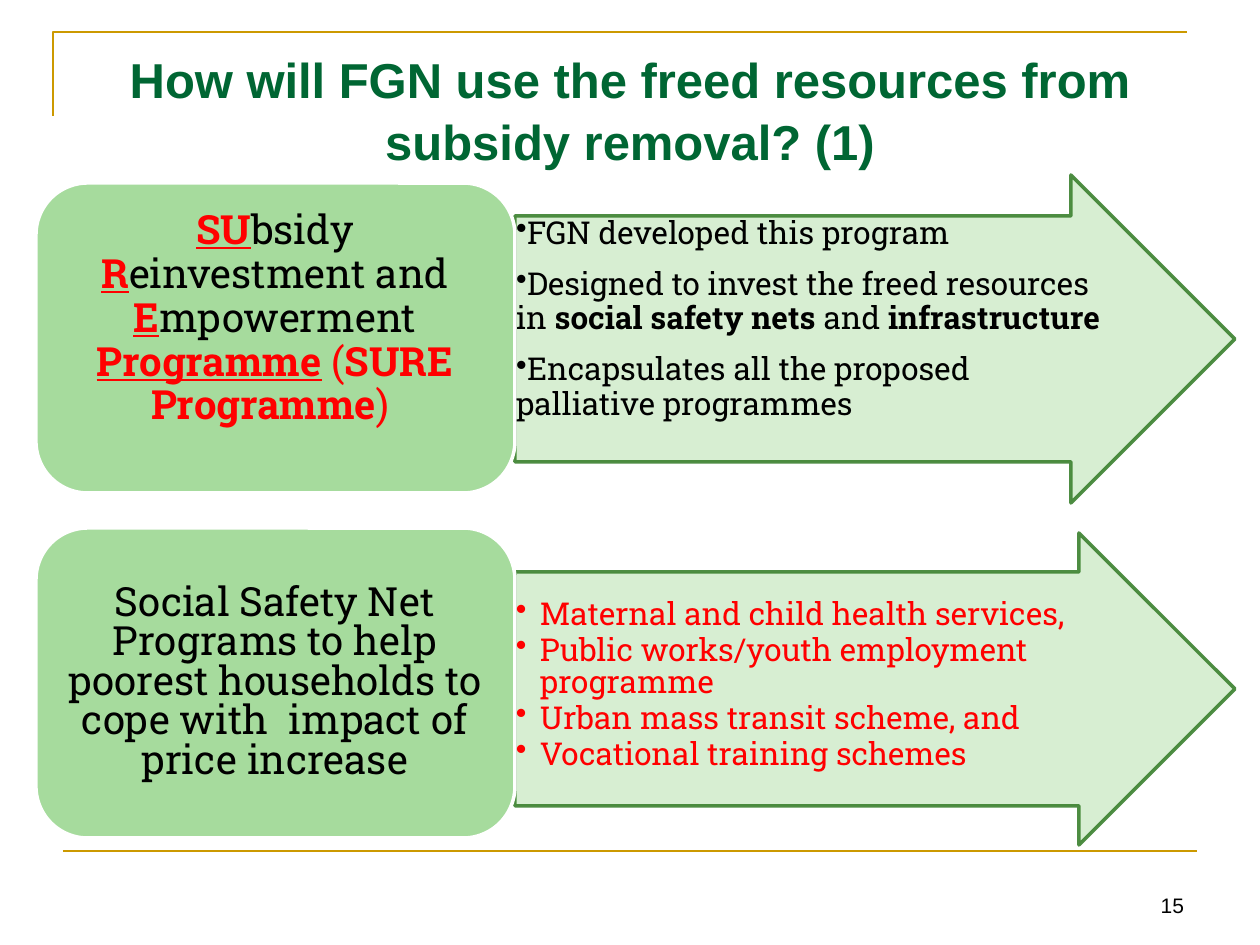
from lxml import etree
from pptx import Presentation
from pptx.dml.color import RGBColor
from pptx.enum.shapes import MSO_CONNECTOR, MSO_SHAPE
from pptx.enum.text import MSO_ANCHOR, PP_ALIGN
from pptx.oxml.ns import qn
from pptx.util import Pt

PX = 914400 // 126
LEFT, MID, RIGHT = PP_ALIGN.LEFT, PP_ALIGN.CENTER, PP_ALIGN.RIGHT
TOP, CENTRE, BASE = MSO_ANCHOR.TOP, MSO_ANCHOR.MIDDLE, MSO_ANCHOR.BOTTOM
ARROW, ROUND = MSO_SHAPE.RIGHT_ARROW, MSO_SHAPE.ROUNDED_RECTANGLE
SLAB = "Roboto Slab"
RED, BLACK, GOLD = "FF0000", "000000", "CC9900"


def color(code):
    return RGBColor.from_string(code)


def text(paras, box, font=SLAB, size=18, ink=BLACK, align=LEFT, anchor=TOP,
         pad=(1, 1), space=1.0, after=0, hang=None):
    """Each paragraph is a list of (words, style); style holds b, u, r (red)."""
    frame = slide.shapes.add_textbox(*[n * PX for n in box]).text_frame
    frame.word_wrap = True
    frame.vertical_anchor = anchor
    frame.margin_left = frame.margin_right = pad[0] * PX
    frame.margin_top = frame.margin_bottom = pad[1] * PX
    for i, runs in enumerate(paras):
        para = frame.paragraphs[0] if i == 0 else frame.add_paragraph()
        para.alignment = align
        para.line_spacing = space
        para.space_after = Pt(after)
        if hang is not None:
            props = para._p.get_or_add_pPr()
            props.set("marL", str(hang * PX))
            props.set("indent", str(-hang * PX))
            etree.SubElement(props, qn("a:buChar")).set("char", "•")
        for words, style in runs:
            run = para.add_run()
            run.text = words
            run.font.name = font
            run.font.size = Pt(size)
            run.font.bold = "b" in style
            run.font.underline = "u" in style
            run.font.color.rgb = color(RED if "r" in style else ink)


deck = Presentation()
deck.slide_width, deck.slide_height = 1260 * PX, 945 * PX
slide = deck.slides.add_slide(deck.slide_layouts[6])

# Gold corner and foot line
path = slide.shapes.build_freeform(53, 116, scale=PX)
path.add_line_segments([(53, 32), (1187, 32)], close=False)
corner = path.convert_to_shape()
corner.shadow.inherit = False
corner.fill.background()
foot = slide.shapes.add_connector(MSO_CONNECTOR.STRAIGHT,
                                  63 * PX, 851 * PX, 1197 * PX, 851 * PX)
etree.SubElement(foot._element.spPr, qn("a:effectLst"))
for rule in (corner, foot):
    rule.line.color.rgb = color(GOLD)
    rule.line.width = Pt(1.5)

# Title
text([[("How will FGN use the freed resources from subsidy removal? (1)", "b")]],
     (63, 41, 1134, 158), font="Arial", size=28, ink="006633", align=MID,
     pad=(13, 6), space=1.05)

# Arrows and the cards at their tails
shapes = [
    (ARROW, (515, 175, 720, 328), "D3EDCE", "3B812F"),
    (ROUND, (36, 183, 479, 310), "A6DB9D", "FFFFFF"),
    (ARROW, (515, 533, 720, 312), "D3EDCE", "3B812F"),
    (ROUND, (36, 528, 479, 310), "A6DB9D", "FFFFFF"),
]
for kind, box, fill, edge in shapes:
    shape = slide.shapes.add_shape(kind, *[n * PX for n in box])
    shape.shadow.inherit = False
    shape.fill.solid()
    shape.fill.fore_color.rgb = color(fill)
    shape.line.color.rgb = color(edge)
    shape.line.width = Pt(2)
    if kind == ARROW:
        shape.adjustments[0], shape.adjustments[1] = 0.75, 0.5
        for tint in shape._element.spPr.iter(qn("a:srgbClr")):
            etree.SubElement(tint, qn("a:alpha")).set("val", "90000")

# Card text
card = dict(size=23, align=MID, anchor=CENTRE, pad=(13, 6))
text([[("SU", "bur"), ("bsidy ", ""), ("R", "bur"), ("einvestment and ", ""),
       ("E", "bur"), ("mpowerment ", ""), ("Programme", "bur"), (" (", "r"),
       ("SURE Programme", "br"), (") ", "r")]],
     (50, 198, 450, 242), space=0.91, **card)
text([[("Social Safety Net Programs to help poorest households to cope with"
        "  impact of price increase", "")]],
     (50, 543, 450, 281), space=0.82, **card)

# Arrow text
text([[("FGN developed this program", "")],
      [("Designed to invest the freed resources in ", ""),
       ("social safety nets", "b"), (" and ", ""), ("infrastructure", "b")],
      [("Encapsulates all the proposed palliative programmes", "")]],
     (515, 216, 598, 246), space=0.91, after=9.5, hang=0)
text([[(words, "r")] for words in (
    "Maternal and child health services,",
    "Public works/youth employment programme",
    "Urban mass transit scheme, and",
    "Vocational training schemes")],
     (515, 600, 604, 205), space=0.82, after=3, hang=24)

# Page number
text([[("15", "")]], (903, 861, 294, 63), font="Arial", size=12,
     align=RIGHT, anchor=BASE, pad=(13, 6))

deck.save("out.pptx")
